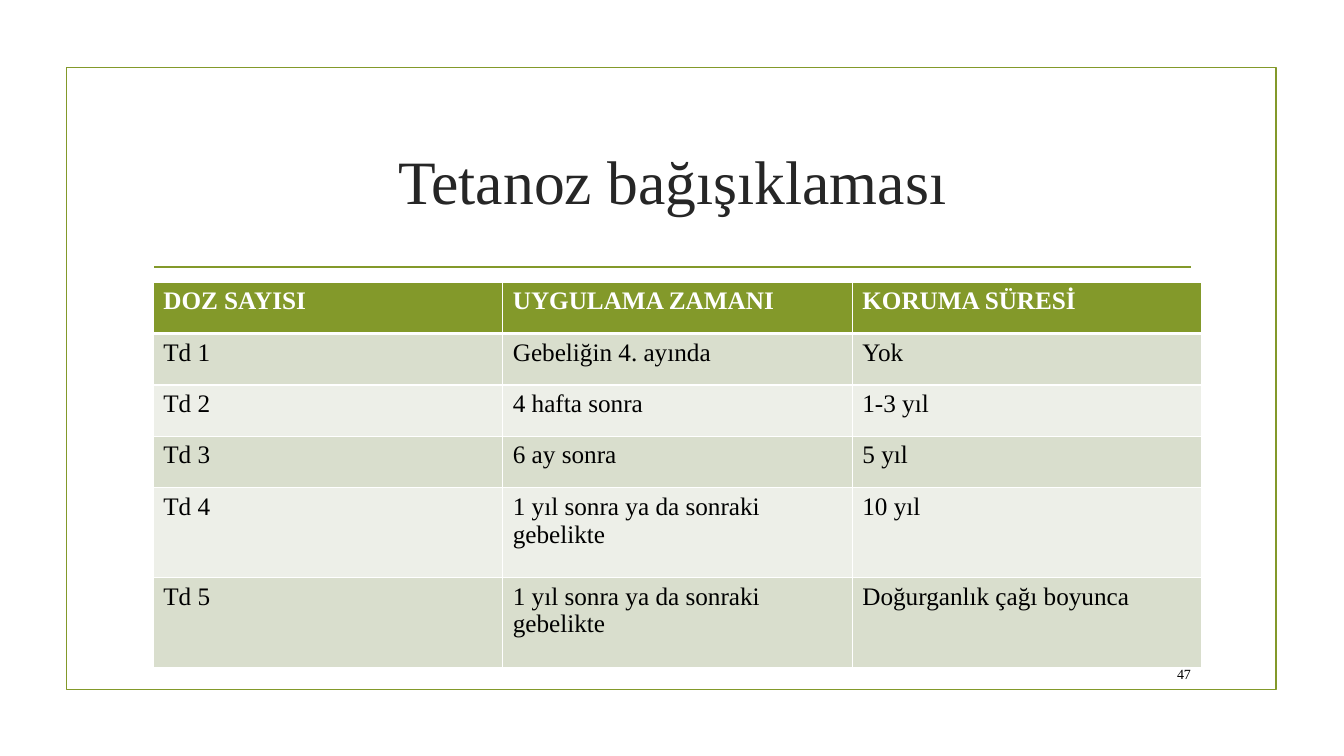
from lxml.etree import SubElement
from pptx import Presentation
from pptx.dml.color import RGBColor
from pptx.enum.shapes import MSO_CONNECTOR, MSO_SHAPE
from pptx.enum.text import MSO_ANCHOR, PP_ALIGN
from pptx.oxml.ns import qn
from pptx.util import Inches, Pt

COLORS = {
    "accent": "83992A",
    "band_dark": "D9DECD",
    "band_light": "EDEFE8",
    "title": "262626",
    "text": "000000",
    "white": "FFFFFF",
}
FONT = "Times New Roman"
DOSES = [
    ("DOZ SAYISI", "UYGULAMA ZAMANI", "KORUMA SÜRESİ"),
    ("Td 1", "Gebeliğin 4. ayında", "Yok"),
    ("Td 2", "4 hafta sonra", "1-3 yıl"),
    ("Td 3", "6 ay sonra", "5 yıl"),
    ("Td 4", "1 yıl sonra ya da sonraki gebelikte", "10 yıl"),
    ("Td 5", "1 yıl sonra ya da sonraki gebelikte", "Doğurganlık çağı boyunca"),
]
SHORT_ROW, TALL_ROW = 0.51, 0.89
TALL_ROWS = (4, 5)


def color(name):
    return RGBColor.from_string(COLORS[name])


def write(frame, text, size, color_name, align=PP_ALIGN.LEFT, bold=False):
    para = frame.paragraphs[0]
    para.text = text
    para.alignment = align
    para.font.name = FONT
    para.font.size = Pt(size)
    para.font.bold = bold
    para.font.color.rgb = color(color_name)


def set_borders(cell, bottom_width):
    properties = cell._tc.get_or_add_tcPr()
    for side, width in (("L", 1), ("R", 1), ("T", 1), ("B", bottom_width)):
        line = SubElement(properties, qn(f"a:ln{side}"), w=str(Pt(width)))
        fill = SubElement(line, qn("a:solidFill"))
        SubElement(fill, qn("a:srgbClr"), val=COLORS["white"])


def add_frame(page, left, top, width, height):
    """Draw the page border and the rule under the title."""
    border = page.shapes.add_shape(
        MSO_SHAPE.RECTANGLE, Inches(left), Inches(top), Inches(width), Inches(height))
    border.shadow.inherit = False
    border.fill.background()
    rule_y = Inches(top + 1.98)
    rule = page.shapes.add_connector(
        MSO_CONNECTOR.STRAIGHT, Inches(left + 0.87), rule_y,
        Inches(left + width - 0.85), rule_y)
    SubElement(rule._element.spPr, qn("a:effectLst"))
    for shape in (border, rule):
        shape.line.color.rgb = color("accent")
        shape.line.width = Pt(1.25)


def place_title(page, left, top, width, height):
    title = page.shapes.title
    title.left, title.top = Inches(left), Inches(top)
    title.width, title.height = Inches(width), Inches(height)
    title.text_frame.vertical_anchor = MSO_ANCHOR.MIDDLE
    write(title.text_frame, "Tetanoz bağışıklaması", 44, "title", PP_ALIGN.CENTER)


def add_dose_table(page, left, top, width):
    heights = [TALL_ROW if row in TALL_ROWS else SHORT_ROW for row in range(len(DOSES))]
    columns = len(DOSES[0])
    table = page.shapes.add_table(
        len(DOSES), columns, Inches(left), Inches(top),
        Inches(width), Inches(sum(heights))).table
    for column in table.columns:
        column.width = Inches(width / columns)
    for row, (texts, height) in enumerate(zip(DOSES, heights)):
        table.rows[row].height = Inches(height)
        header = row == 0
        band = "accent" if header else "band_dark" if row % 2 else "band_light"
        for column, text in enumerate(texts):
            cell = table.cell(row, column)
            set_borders(cell, 3 if header else 1)
            cell.fill.solid()
            cell.fill.fore_color.rgb = color(band)
            write(cell.text_frame, text, 18, "white" if header else "text", bold=header)


def add_page_number(page, left, top, width, height):
    box = page.shapes.add_textbox(
        Inches(left), Inches(top), Inches(width), Inches(height))
    box.text_frame.word_wrap = True
    box.text_frame.vertical_anchor = MSO_ANCHOR.MIDDLE
    write(box.text_frame, "47", 10, "text", PP_ALIGN.RIGHT)


def main():
    deck = Presentation()
    deck.slide_width, deck.slide_height = Inches(13.33), Inches(7.5)
    page = deck.slides.add_slide(deck.slide_layouts[5])
    add_frame(page, 0.66, 0.67, 12, 6.17)
    place_title(page, 1.42, 1.07, 10.5, 1.43)
    add_dose_table(page, 1.52, 2.8, 10.4)
    add_page_number(page, 11.32, 6.53, 0.59, 0.31)
    deck.save("out.pptx")


if __name__ == "__main__":
    main()
